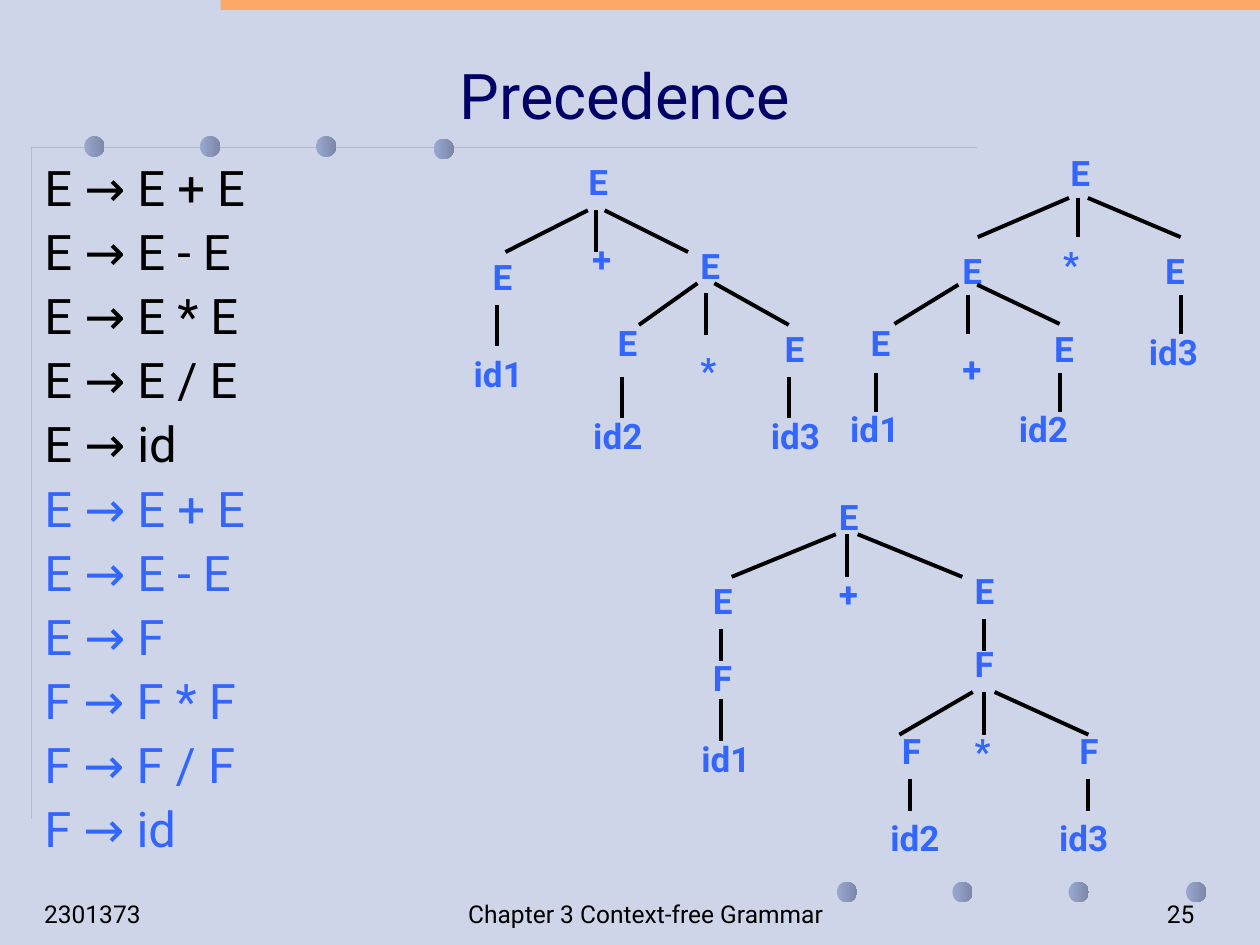
import pptx
import pptx.util
import pptx.dml.color
import pptx.enum.shapes
import pptx.enum.text
import pptx.oxml.ns
import lxml.etree

Cm = pptx.util.Cm
Pt = pptx.util.Pt
Align = pptx.enum.text.PP_ALIGN
Anchor = pptx.enum.text.MSO_ANCHOR
Shape = pptx.enum.shapes.MSO_SHAPE
BLUE, BLACK, NAVY, ORANGE = "3366FF", "000000", "000066", "FEA868"


def tint(hue):
    return pptx.dml.color.RGBColor.from_string(hue)


def place(shape, box):
    shape.left, shape.top, shape.width, shape.height = map(Cm, box)


def style(para, size, hue, bold=False, align=Align.LEFT):
    para.alignment = align
    font = para.font
    font.name, font.size, font.bold = "Roboto", Pt(size), bold
    font.color.rgb = tint(hue)


def label(slide, box, text, size, hue, bold=False, align=Align.LEFT, anchor=Anchor.TOP):
    frame = slide.shapes.add_textbox(*map(Cm, box)).text_frame
    frame.word_wrap = True
    frame.vertical_anchor = anchor
    frame.text = text
    style(frame.paragraphs[0], size, hue, bold, align)


def stroke(slide, x1, y1, x2, y2):
    line = slide.shapes.add_connector(
        pptx.enum.shapes.MSO_CONNECTOR.STRAIGHT, Cm(x1), Cm(y1), Cm(x2), Cm(y2))
    line.line.color.rgb = tint(BLACK)
    line.line.width = Pt(2.25)
    lxml.etree.SubElement(line._element.spPr, pptx.oxml.ns.qn("a:effectLst"))


def bar(slide, box):
    shape = slide.shapes.add_shape(Shape.RECTANGLE, *map(Cm, box))
    shape.shadow.inherit = False
    shape.fill.solid()
    shape.fill.fore_color.rgb = tint(ORANGE)
    shape.line.fill.background()


def rule(slide, box):
    x, y, wide, high = map(Cm, box)
    pen = slide.shapes.build_freeform(x, y + high)
    pen.add_line_segments([(x, y), (x + wide, y)], close=False)
    shape = pen.convert_to_shape()
    shape.shadow.inherit = False
    shape.fill.background()
    shape.line.color.rgb = tint(ORANGE)
    shape.line.width = Pt(0.75)


def dots(slide, x, y, dip=0):
    for step, drop in ((0, 0), (2.33, 0), (4.67, 0), (7.04, dip)):
        dot = slide.shapes.add_shape(Shape.OVAL, Cm(x + step), Cm(y + drop), Cm(0.41), Cm(0.41))
        dot.shadow.inherit = False
        dot.fill.gradient()
        dot.fill.gradient_angle = 0
        for stop, hue in zip(dot.fill.gradient_stops, ("9AA8D0", "7C87A8")):
            stop.color.rgb = tint(hue)
        dot.line.fill.background()


def foot(slide, y):
    for x, wide, text, align in (
            (0.64, 6.15, "2301373", Align.LEFT),
            (6.99, 12.06, "Chapter 3 Context-free Grammar", Align.CENTER),
            (19.25, 5.08, "25", Align.RIGHT)):
        label(slide, (x, y, wide, 0.64), text, 14, BLACK, align=align, anchor=Anchor.BOTTOM)


def title(slide, box):
    shape = slide.shapes.title
    place(shape, box)
    frame = shape.text_frame
    frame.text = "Precedence"
    frame.vertical_anchor = Anchor.MIDDLE
    frame.auto_size = pptx.enum.text.MSO_AUTO_SIZE.NONE
    style(frame.paragraphs[0], 36, NAVY, align=Align.CENTER)


def rules(slide, box, parts):
    shape = slide.placeholders[1]
    place(shape, box)
    frame = shape.text_frame
    frame.auto_size = pptx.enum.text.MSO_AUTO_SIZE.NONE
    lines = [(text, hue) for hue, texts in parts for text in texts]
    frame.text = "\n".join(text for text, hue in lines)
    for rank, (para, (text, hue)) in enumerate(zip(frame.paragraphs, lines)):
        props = para._p.get_or_add_pPr()
        props.set("marL", str(Cm(0.95)))
        props.set("indent", str(-Cm(0.95)))
        lxml.etree.SubElement(props, pptx.oxml.ns.qn("a:buNone"))
        para.line_spacing = 0.9
        para.space_before = Pt(6.4 if rank else 0)
        style(para, 28, hue)


def tree(slide, x, y, drop, gap, nodes, fans, stems):
    for text, left, top in nodes:
        wide = 1.75 if len(text) > 1 else 1.14
        label(slide, (x + left, y + top, wide, 1.09), text, 20, BLUE, True)
    for mid, top, left, right, lag in fans:
        for start, end, late in ((mid - gap, left, 0), (mid, mid, lag), (mid + gap, right, 0)):
            stroke(slide, x + start, y + top + late, x + end, y + top + late + drop)
    for mid, top, fall in stems:
        stroke(slide, x + mid, y + top, x + mid, y + top + fall)


def main():
    deck = pptx.Presentation()
    deck.slide_width, deck.slide_height = Cm(25.4), Cm(19.05)
    slide = deck.slides.add_slide(deck.slide_layouts[1])
    slide.background.fill.solid()
    slide.background.fill.fore_color.rgb = tint("CED5E8")

    bar(slide, (4.45, 0, 20.95, 0.2))
    rule(slide, (0.64, 2.97, 19.05, 13.54))
    dots(slide, 1.7, 2.75, 0.05)
    dots(slide, 16.87, 17.78)
    foot(slide, 18.2)
    title(slide, (0.64, 0.85, 23.92, 2.12))
    rules(slide, (0.64, 3.18, 11.75, 14.82), (
        (BLACK, ("E → E + E", "E → E - E", "E → E * E", "E → E / E", "E → id")),
        (BLUE, ("E → E + E", "E → E - E", "E → F", "F → F * F", "F → F / F", "F → id"))))

    tree(slide, 9.3, 3.12, 0.84, 0.17,
         (("E", 2.31, 0), ("E", 0.38, 1.9), ("+", 2.39, 1.55), ("E", 4.57, 1.68),
          ("id1", 0, 3.86), ("E", 2.9, 3.23), ("*", 4.57, 3.78), ("E", 6.27, 3.35),
          ("id2", 2.41, 5.11), ("id3", 5.99, 5.11)),
         ((2.72, 1.12, 0.89, 4.57, 0), (4.93, 2.59, 3.58, 6.6, 0.2)),
         ((0.71, 3.02, 0.84), (3.23, 4.47, 0.84), (6.6, 4.47, 0.84)))
    tree(slide, 16.89, 2.92, 0.79, 0.19,
         (("E", 4.44, 0), ("E", 2.26, 1.98), ("*", 4.29, 1.85), ("E", 6.35, 1.98),
          ("E", 0.41, 3.43), ("+", 2.26, 3.96), ("E", 4.11, 3.56), ("id3", 6.02, 3.61),
          ("id1", 0, 5.18), ("id2", 3.4, 5.18)),
         ((4.85, 1.07, 2.82, 6.91, 0), (2.62, 2.82, 1.14, 4.47, 0.2)),
         ((0.76, 4.6, 0.79), (4.47, 4.6, 0.79), (6.91, 3.02, 0.79)))
    tree(slide, 13.89, 9.86, 0.86, 0.22,
         (("E", 2.77, 0), ("E", 0.23, 1.7), ("+", 2.77, 1.55), ("E", 5.51, 1.5),
          ("F", 0.23, 3.25), ("F", 5.51, 2.97), ("id1", 0, 4.88), ("F", 4.04, 4.72),
          ("*", 5.51, 4.72), ("F", 7.62, 4.72), ("id2", 3.81, 6.48), ("id3", 7.21, 6.48)),
         ((3.18, 0.91, 0.86, 5.51, 0), (5.94, 4.09, 4.24, 8.05, 0)),
         ((0.64, 2.82, 0.64), (0.64, 4.24, 0.84), (5.94, 2.62, 0.64),
          (4.45, 5.84, 0.64), (8.05, 5.84, 0.64)))
    deck.save("out.pptx")


if __name__ == "__main__":
    main()
